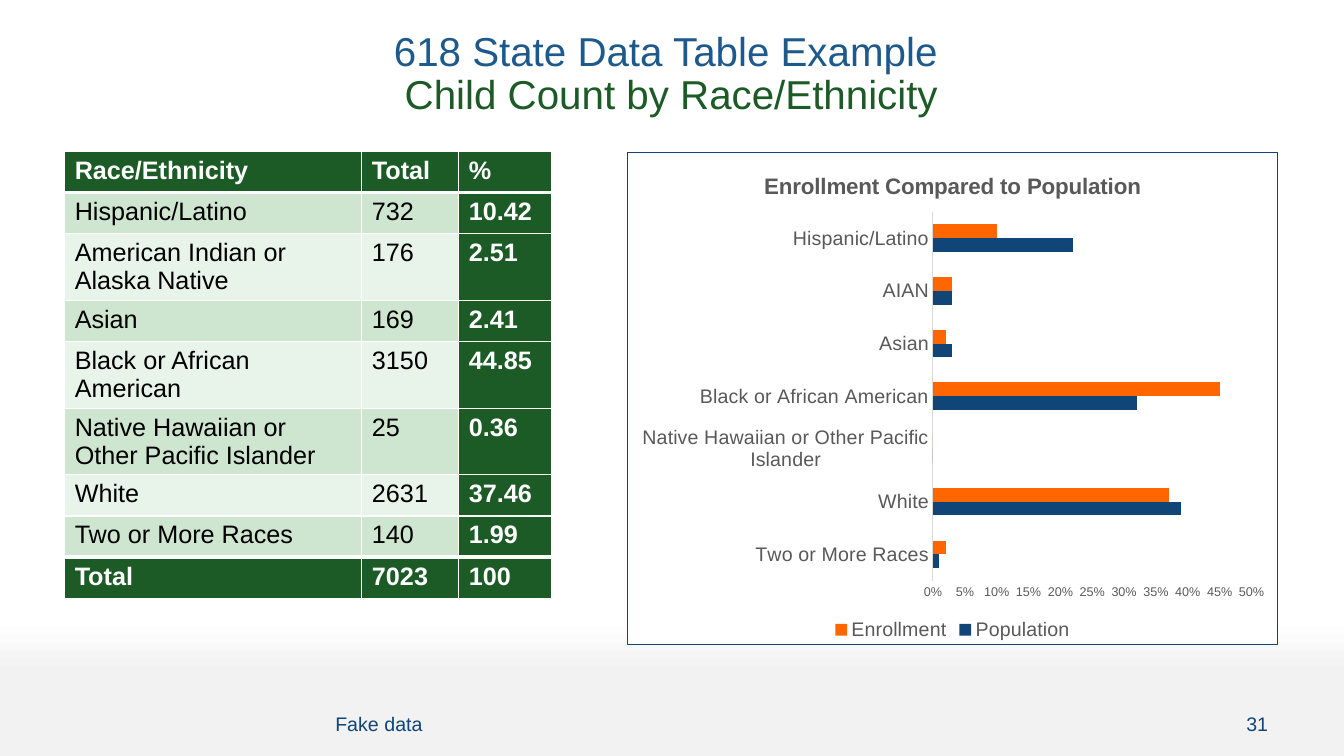
from dataclasses import dataclass

from lxml.etree import SubElement
from pptx import Presentation
from pptx.chart.data import CategoryChartData
from pptx.dml.color import RGBColor as Rgb
from pptx.enum.chart import XL_CHART_TYPE as ChartType
from pptx.enum.chart import XL_LEGEND_POSITION as LegendPosition
from pptx.enum.chart import XL_TICK_MARK as TickMark
from pptx.enum.text import MSO_ANCHOR as Anchor
from pptx.enum.text import MSO_AUTO_SIZE as AutoSize
from pptx.enum.text import PP_ALIGN as Align
from pptx.oxml import parse_xml
from pptx.oxml.ns import nsdecls, qn
from pptx.util import Cm, Pt


@dataclass(frozen=True)
class Theme:
    """Colours, font and type sizes of the slide."""
    font: str = "Arial"
    white: str = "FFFFFF"
    black: str = "000000"
    haze: str = "F2F2F2"
    title_blue: str = "1D598B"
    navy: str = "104578"
    green: str = "1C5B25"
    band_dark: str = "CEE5D0"
    band_light: str = "E8F3E9"
    orange: str = "FF6600"
    grey: str = "595959"
    axis_line: str = "D9D9D9"
    title_size: float = 28.8
    table_size: float = 18
    chart_title_size: float = 16
    label_size: float = 14
    scale_size: float = 9


THEME = Theme()

CHILD_COUNT = [
    ("Race/Ethnicity", "Total", "%"),
    ("Hispanic/Latino", "732", "10.42"),
    ("American Indian or Alaska Native", "176", "2.51"),
    ("Asian", "169", "2.41"),
    ("Black or African American", "3150", "44.85"),
    ("Native Hawaiian or Other Pacific Islander", "25", "0.36"),
    ("White", "2631", "37.46"),
    ("Two or More Races", "140", "1.99"),
    ("Total", "7023", "100"),
]
COLUMN_WIDTHS = (7.49, 2.44, 2.34)
ROW_HEIGHT = 1.04

GROUPS = ["Two or More Races", "White", "Native Hawaiian or Other Pacific Islander",
          "Black or African American", "Asian", "AIAN", "Hispanic/Latino"]
SHARES = [
    ("Population", (0.01, 0.39, 0, 0.32, 0.03, 0.03, 0.22), THEME.navy),
    ("Enrollment", (0.02, 0.37, 0, 0.45, 0.02, 0.03, 0.1), THEME.orange),
]
PLOT_AREA = {"x": 0.47, "y": 0.12, "w": 0.49, "h": 0.75}


def style_font(font, size, color, bold=False):
    """Apply the theme typeface with a size, colour and weight."""
    font.name, font.size, font.bold = THEME.font, Pt(size), bold
    font.color.rgb = Rgb.from_string(color)


def paint_background(slide):
    """Fade the slide from white to a light grey foot."""
    fill = slide.background.fill
    fill.gradient()
    fill.gradient_angle = 270
    for stop, position, color in zip(fill.gradient_stops, (0.82, 0.89), (THEME.white, THEME.haze)):
        stop.position = position
        stop.color.rgb = Rgb.from_string(color)


def write_title(slide, lines):
    """Place the title and give each line its own colour."""
    title = slide.shapes.title
    title.left, title.top, title.width, title.height = Cm(1.63), Cm(0.64), Cm(30.58), Cm(2.49)
    frame = title.text_frame
    frame.text = "\v".join(line for line, _ in lines)
    frame.auto_size, frame.vertical_anchor = AutoSize.NONE, Anchor.MIDDLE
    heading = frame.paragraphs[0]
    heading.alignment, heading.line_spacing = Align.CENTER, 0.9
    for run, (_, color) in zip(heading.runs, lines):
        style_font(run.font, THEME.title_size, color)


def add_footer(slide, text, left, width, alignment):
    """Add one text of the footer row."""
    footer = slide.shapes.add_textbox(Cm(left), Cm(17.55), Cm(width), Cm(1.38))
    frame = footer.text_frame
    frame.word_wrap, frame.vertical_anchor = True, Anchor.MIDDLE
    frame.text = text
    frame.paragraphs[0].alignment = alignment
    style_font(frame.paragraphs[0].runs[0].font, THEME.label_size, THEME.navy)


def add_borders(cell, top, bottom):
    """Draw white cell borders, with top and bottom widths in points."""
    properties = cell._tc.get_or_add_tcPr()
    for side, width in (("L", 1), ("R", 1), ("T", top), ("B", bottom)):
        line = SubElement(properties, qn(f"a:ln{side}"), w=str(Pt(width)))
        SubElement(SubElement(line, qn("a:solidFill")), qn("a:srgbClr"), val=THEME.white)


def add_count_table(slide):
    """Add the child count table with green header, total row and last column."""
    row_count, column_count = len(CHILD_COUNT), len(COLUMN_WIDTHS)
    table = slide.shapes.add_table(
        row_count, column_count, Cm(1.63), Cm(3.81),
        Cm(sum(COLUMN_WIDTHS)), Cm(ROW_HEIGHT * row_count)).table
    for column, width in zip(table.columns, COLUMN_WIDTHS):
        column.width = Cm(width)
    last = row_count - 1
    for r, record in enumerate(CHILD_COUNT):
        table.rows[r].height = Cm(ROW_HEIGHT)
        band = THEME.band_dark if r % 2 else THEME.band_light
        for c, text in enumerate(record):
            strong = r in (0, last) or c == column_count - 1
            cell = table.cell(r, c)
            cell.text = text
            add_borders(cell, 3 if r in (1, last) else 1, 3 if r in (0, last - 1) else 1)
            cell.fill.solid()
            cell.fill.fore_color.rgb = Rgb.from_string(THEME.green if strong else band)
            style_font(cell.text_frame.paragraphs[0].runs[0].font, THEME.table_size,
                       THEME.white if strong else THEME.black, strong)


def frame_chart(chart):
    """Give the chart a white ground, a navy border and a fixed plot area."""
    chart.element.find(qn("c:chart")).addnext(parse_xml(
        f'<c:spPr {nsdecls("c", "a")}>'
        f'<a:solidFill><a:srgbClr val="{THEME.white}"/></a:solidFill>'
        f'<a:ln w="{Pt(0.75)}"><a:solidFill><a:srgbClr val="{THEME.navy}"/></a:solidFill></a:ln>'
        '</c:spPr>'))
    plot_area = chart.element.find(".//" + qn("c:plotArea"))
    for old_layout in plot_area.findall(qn("c:layout")):
        plot_area.remove(old_layout)
    modes = '<c:xMode val="edge"/><c:yMode val="edge"/>'
    sizes = "".join(f'<c:{key} val="{share}"/>' for key, share in PLOT_AREA.items())
    plot_area.insert(0, parse_xml(
        f'<c:layout {nsdecls("c")}><c:manualLayout><c:layoutTarget val="inner"/>'
        f'{modes}{sizes}</c:manualLayout></c:layout>'))


def style_axis(axis, size):
    """Strip an axis of ticks and gridlines and set its labels."""
    axis.major_tick_mark = axis.minor_tick_mark = TickMark.NONE
    axis.has_major_gridlines = False
    style_font(axis.tick_labels.font, size, THEME.grey)


def add_share_chart(slide):
    """Add the bar chart of enrollment against population."""
    data = CategoryChartData(number_format="0%")
    data.categories = GROUPS
    for name, values, _ in SHARES:
        data.add_series(name, values)
    chart = slide.shapes.add_chart(ChartType.BAR_CLUSTERED, Cm(15.8), Cm(3.84),
                                   Cm(16.41), Cm(12.42), data).chart
    style_font(chart.font, 10, THEME.black)
    frame_chart(chart)

    chart.has_title = True
    heading = chart.chart_title.text_frame
    heading.text = "Enrollment Compared to Population"
    style_font(heading.paragraphs[0].runs[0].font, THEME.chart_title_size, THEME.grey, True)

    chart.has_legend = True
    chart.legend.position = LegendPosition.BOTTOM
    chart.legend.include_in_layout = False
    style_font(chart.legend.font, THEME.label_size, THEME.grey)

    style_axis(chart.category_axis, THEME.label_size)
    baseline = chart.category_axis.format.line
    baseline.color.rgb, baseline.width = Rgb.from_string(THEME.axis_line), Pt(0.75)

    scale = chart.value_axis
    style_axis(scale, THEME.scale_size)
    scale.minimum_scale, scale.maximum_scale, scale.major_unit = 0, 0.5, 0.05
    scale.tick_labels.number_format = "0%"
    scale.tick_labels.number_format_is_linked = False
    scale.format.line.fill.background()

    bars = chart.plots[0]
    bars.gap_width, bars.overlap, bars.vary_by_categories = 182, 0, False
    for series, (_, _, color) in zip(bars.series, SHARES):
        series.format.fill.solid()
        series.format.fill.fore_color.rgb = Rgb.from_string(color)


def main():
    """Build the slide and save it."""
    deck = Presentation()
    deck.slide_width, deck.slide_height = Cm(33.87), Cm(19.05)
    slide = deck.slides.add_slide(deck.slide_layouts[5])
    paint_background(slide)
    write_title(slide, [("618 State Data Table Example ", THEME.title_blue),
                        ("Child Count by Race/Ethnicity", THEME.green)])
    add_count_table(slide)
    add_share_chart(slide)
    add_footer(slide, "Fake data", 8.2, 20.57, Align.LEFT)
    add_footer(slide, "31", 28.78, 3.43, Align.RIGHT)
    deck.save("out.pptx")


if __name__ == "__main__":
    main()
